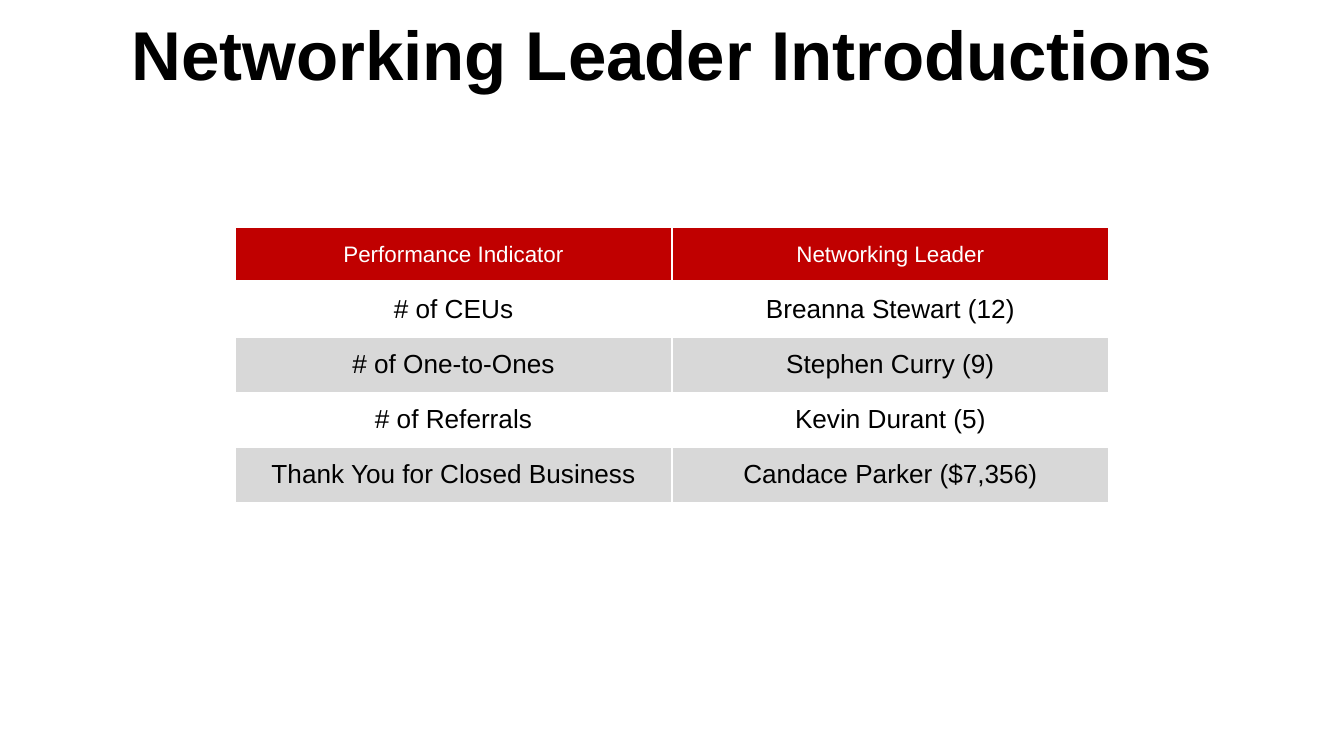
from dataclasses import dataclass

from lxml import etree
from pptx import Presentation
from pptx.dml.color import RGBColor
from pptx.enum.text import MSO_ANCHOR, PP_ALIGN
from pptx.oxml.ns import qn
from pptx.util import Pt

MIDDLE = MSO_ANCHOR.MIDDLE
CENTER = PP_ALIGN.CENTER

BLACK, WHITE, RED, GRAY = "000000", "FFFFFF", "C00000", "D8D8D8"
COLUMN_WIDTH, ROW_HEIGHT = 234, 29.5


@dataclass
class RowStyle:
    fill: str
    color: str
    size: float
    bottom_border: float = 1


HEADER = RowStyle(RED, WHITE, 12, bottom_border=3)
BANDS = [RowStyle(WHITE, BLACK, 14), RowStyle(GRAY, BLACK, 14)]

ROWS = [
    ("Performance Indicator", "Networking Leader"),
    ("# of CEUs", "Breanna Stewart (12)"),
    ("# of One-to-Ones", "Stephen Curry (9)"),
    ("# of Referrals", "Kevin Durant (5)"),
    ("Thank You for Closed Business", "Candace Parker ($7,356)"),
]


def rgb(value: str) -> RGBColor:
    return RGBColor.from_string(value)


def apply(target, values: dict) -> None:
    for name, value in values.items():
        setattr(target, name, value)


def write(paragraph, text: str, size: float, color: str, bold: bool = False) -> None:
    paragraph.alignment = CENTER
    run = paragraph.add_run()
    run.text = text
    apply(run.font, {"name": "Arial", "size": Pt(size), "bold": bold})
    run.font.color.rgb = rgb(color)


def set_border(cell, side: str, width: float) -> None:
    properties = cell._tc.get_or_add_tcPr()
    line = etree.SubElement(properties, qn(f"a:{side}"), w=str(Pt(width)))
    fill = etree.SubElement(line, qn("a:solidFill"))
    etree.SubElement(fill, qn("a:srgbClr"), val=WHITE)


def fill_cell(cell, text: str, style: RowStyle, top_border: float) -> None:
    borders = {"lnL": 1, "lnR": 1, "lnT": top_border, "lnB": style.bottom_border}
    for side, width in borders.items():
        set_border(cell, side, width)
    cell.fill.solid()
    cell.fill.fore_color.rgb = rgb(style.fill)
    cell.vertical_anchor = MIDDLE
    write(cell.text_frame.paragraphs[0], text, style.size, style.color)


def add_title(slide, text: str) -> None:
    title = slide.shapes.add_textbox(Pt(30), Pt(0), Pt(660), Pt(62.5))
    frame = title.text_frame
    apply(frame, {
        "word_wrap": True, "vertical_anchor": MIDDLE,
        "margin_left": Pt(5), "margin_right": Pt(5),
        "margin_top": Pt(3), "margin_bottom": Pt(3),
    })
    frame.paragraphs[0].line_spacing = 0.9
    write(frame.paragraphs[0], text, 37, BLACK, bold=True)


def add_leader_table(slide, rows: list[tuple[str, str]]) -> None:
    columns = len(rows[0])
    table = slide.shapes.add_table(
        len(rows), columns, Pt(126), Pt(121.75),
        Pt(COLUMN_WIDTH * columns), Pt(ROW_HEIGHT * len(rows)),
    ).table
    apply(table, {"first_row": True, "horz_banding": False})
    top_border = 1
    for index, texts in enumerate(rows):
        style = BANDS[(index - 1) % len(BANDS)] if index else HEADER
        for column, text in enumerate(texts):
            fill_cell(table.cell(index, column), text, style, top_border)
        top_border = style.bottom_border


def main() -> None:
    presentation = Presentation()
    apply(presentation, {"slide_width": Pt(720), "slide_height": Pt(405)})
    slide = presentation.slides.add_slide(presentation.slide_layouts[6])

    # Title
    add_title(slide, "Networking Leader Introductions")

    # Leaders by performance indicator
    add_leader_table(slide, ROWS)

    presentation.save("out.pptx")


if __name__ == "__main__":
    main()
